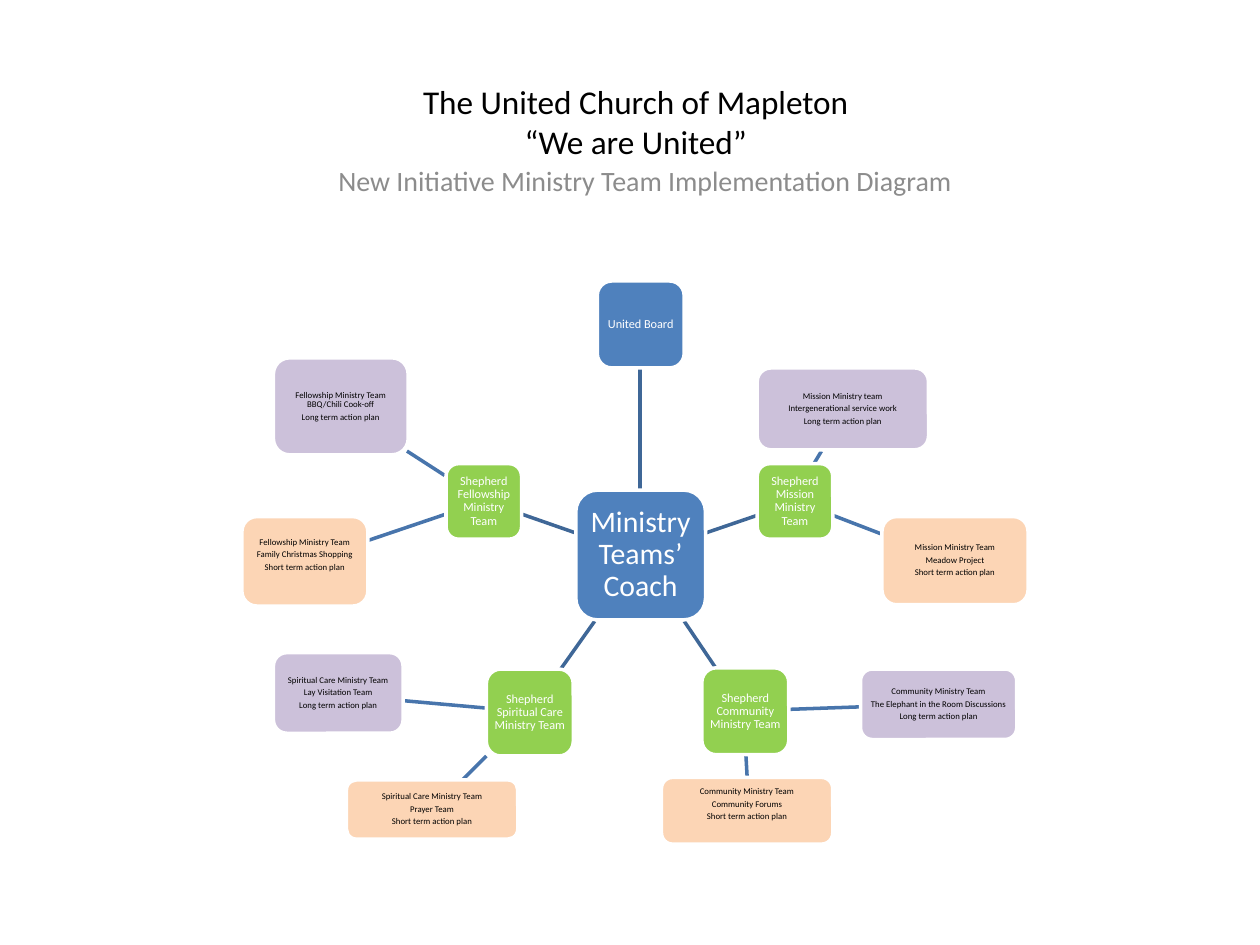
from dataclasses import dataclass

from lxml import etree
from pptx import Presentation
from pptx.dml.color import RGBColor
from pptx.enum import shapes, text
from pptx.oxml import ns
from pptx.util import Inches, Pt

FONT = "Calibri"
COLORS = {
    "title": "000000",
    "subtitle": "8C8C8C",
    "hub": "4F81BD",
    "shepherd": "92D050",
    "long": "CCC1DA",
    "short": "FCD5B5",
    "white": "FFFFFF",
    "black": "000000",
    "spoke": "3F6797",
    "branch": "4875AC",
}


@dataclass
class Heading:
    left: float
    top: float
    width: float
    height: float
    words: str
    size: float
    color: str
    anchor: text.MSO_ANCHOR


@dataclass
class Node:
    left: float
    top: float
    width: float
    height: float
    words: str
    fill: str
    size: float = 7
    inset: float = 0.02
    ink: str = "white"
    lift: float = 0


@dataclass
class Link:
    start: tuple[float, float]
    end: tuple[float, float]
    color: str


def plan(left: float, top: float, width: float, height: float,
         words: str, term: str, lift: float = 0) -> Node:
    full_words = f"{words}\n{term.capitalize()} term action plan"
    return Node(left, top, width, height, full_words, term, 5, 0.01, "black", lift)


HEADINGS = [
    Heading(0.92, 0.5, 8.25, 0.92, "The United Church of Mapleton\v“We are United”",
            19, "title", text.MSO_ANCHOR.MIDDLE),
    Heading(1.08, 1.25, 8.08, 0.5, "New Initiative Ministry Team Implementation Diagram",
            16, "subtitle", text.MSO_ANCHOR.TOP),
]

LINKS = [
    Link((4.57, 4.23), (4.14, 4.08), "spoke"),
    Link((4.72, 4.93), (4.45, 5.31), "spoke"),
    Link((5.43, 4.93), (5.68, 5.3), "spoke"),
    Link((5.6, 4.23), (6.01, 4.09), "spoke"),
    Link((5.08, 3.89), (5.08, 2.92), "spoke"),
    Link((6.46, 3.68), (6.52, 3.58), "branch"),
    Link((6.61, 4.09), (7, 4.24), "branch"),
    Link((6.26, 5.63), (6.83, 5.61), "branch"),
    Link((5.92, 5.99), (5.93, 6.17), "branch"),
    Link((3.86, 6), (3.67, 6.19), "branch"),
    Link((3.86, 5.62), (3.19, 5.56), "branch"),
    Link((3.54, 3.78), (3.23, 3.58), "branch"),
    Link((3.54, 4.08), (2.92, 4.29), "branch"),
]

NODES = [
    Node(4.57, 3.89, 1.03, 1.03, "Ministry Teams’ Coach", "hub", 17, 0.05),
    Node(4.74, 2.23, 0.69, 0.69, "United Board", "hub"),
    Node(6.01, 3.68, 0.6, 0.6, "Shepherd Mission Ministry Team", "shepherd"),
    plan(6.01, 2.92, 1.36, 0.65,
         "Mission Ministry team\nIntergenerational service work", "long"),
    plan(7, 4.1, 1.16, 0.7, "Mission Ministry Team\nMeadow Project", "short"),
    Node(5.57, 5.3, 0.69, 0.69, "Shepherd Community Ministry Team", "shepherd"),
    plan(6.83, 5.31, 1.24, 0.56,
         "Community Ministry Team\nThe Elephant in the Room Discussions", "long"),
    plan(5.25, 6.17, 1.36, 0.53, "Community Ministry Team\nCommunity Forums", "short", 0.1),
    Node(3.86, 5.31, 0.69, 0.69, "Shepherd Spiritual Care Ministry Team", "shepherd"),
    plan(2.75, 6.19, 1.36, 0.47, "Spiritual Care Ministry Team\nPrayer Team", "short"),
    plan(2.17, 5.18, 1.03, 0.64, "Spiritual Care Ministry Team\nLay Visitation Team", "long"),
    Node(3.54, 3.68, 0.6, 0.6, "Shepherd Fellowship Ministry Team", "shepherd"),
    plan(2.17, 2.84, 1.07, 0.77, "Fellowship Ministry Team BBQ/Chili Cook-off", "long"),
    plan(1.92, 4.1, 1, 0.71,
         "Fellowship Ministry Team\nFamily Christmas Shopping", "short", 0.1),
]


def color_of(name: str) -> RGBColor:
    return RGBColor.from_string(COLORS[name])


def write(box, words: str, size: float, color: str) -> None:
    frame = box.text_frame
    frame.word_wrap = True
    frame.text = words
    for paragraph in frame.paragraphs:
        paragraph.alignment = text.PP_ALIGN.CENTER
        for span in paragraph.runs:
            span.font.name = FONT
            span.font.size = Pt(size)
            span.font.color.rgb = color_of(color)


def draw_heading(page, heading: Heading) -> None:
    box = page.shapes.add_textbox(Inches(heading.left), Inches(heading.top),
                                  Inches(heading.width), Inches(heading.height))
    write(box, heading.words, heading.size, heading.color)
    box.text_frame.vertical_anchor = heading.anchor


def draw_link(page, link: Link) -> None:
    points = [Inches(value) for value in (*link.start, *link.end)]
    connector = page.shapes.add_connector(shapes.MSO_CONNECTOR.STRAIGHT, *points)
    connector.line.color.rgb = color_of(link.color)
    connector.line.width = Pt(2)
    etree.SubElement(connector._element.spPr, ns.qn("a:effectLst"))


def draw_node(page, node: Node) -> None:
    box = page.shapes.add_shape(shapes.MSO_SHAPE.ROUNDED_RECTANGLE,
                                Inches(node.left), Inches(node.top),
                                Inches(node.width), Inches(node.height))
    box.shadow.inherit = False
    box.fill.solid()
    box.fill.fore_color.rgb = color_of(node.fill)
    box.line.color.rgb = color_of("white")
    box.line.width = Pt(2)
    write(box, node.words, node.size, node.ink)
    frame = box.text_frame
    frame.vertical_anchor = text.MSO_ANCHOR.MIDDLE
    frame.margin_left = frame.margin_right = frame.margin_top = Inches(node.inset)
    frame.margin_bottom = Inches(node.inset + node.lift)
    for paragraph in frame.paragraphs:
        paragraph.line_spacing = 0.9
    for paragraph in frame.paragraphs[:-1]:
        paragraph.space_after = Pt(0.35 * node.size)


def main() -> None:
    deck = Presentation()
    deck.slide_width, deck.slide_height = Inches(10), Inches(7.5)
    page = deck.slides.add_slide(deck.slide_layouts[6])
    for heading in HEADINGS:
        draw_heading(page, heading)
    for link in LINKS:
        draw_link(page, link)
    for node in NODES:
        draw_node(page, node)
    deck.save("out.pptx")


if __name__ == "__main__":
    main()
